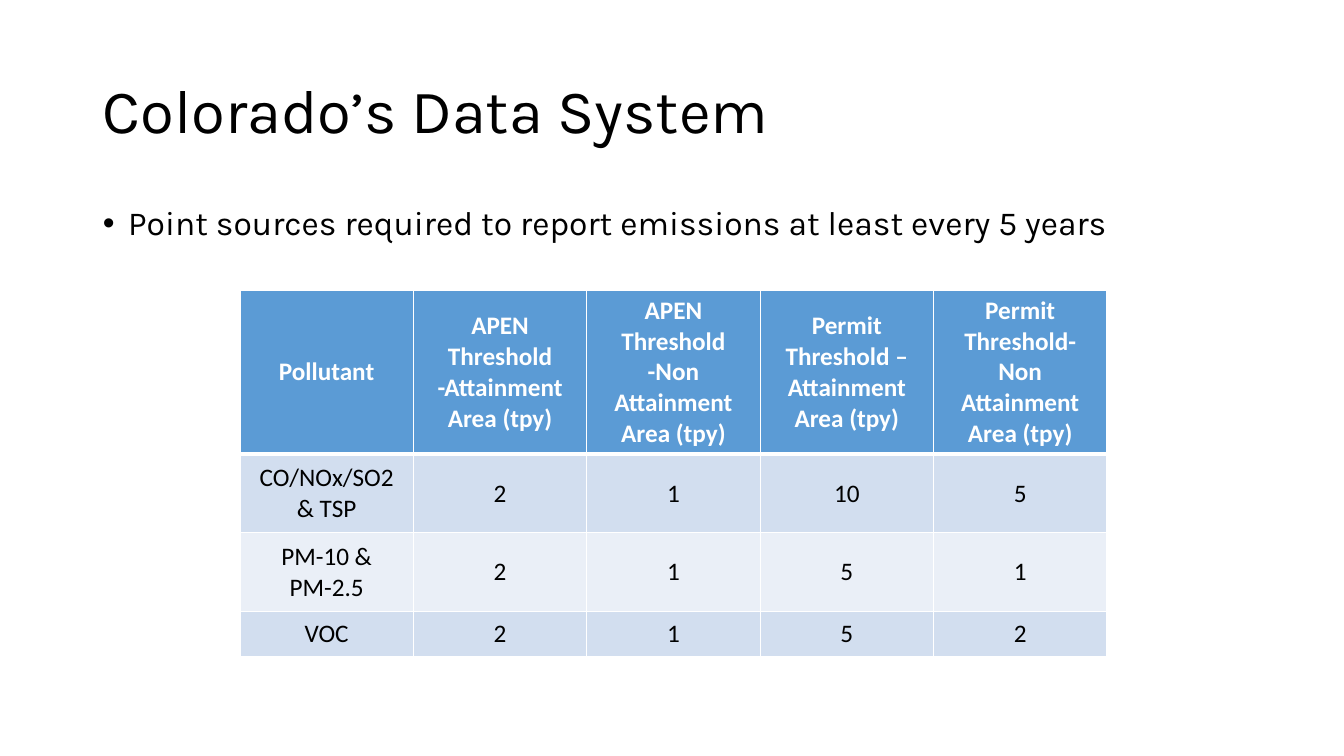
from dataclasses import dataclass

from lxml import etree
from pptx import Presentation
from pptx import util as u
from pptx.dml.color import RGBColor
from pptx.enum import text
from pptx.oxml import ns

COLORS = {
    "ink": "000000",
    "white": "FFFFFF",
    "header": "5B9BD5",
    "band_dark": "D2DEEF",
    "band_light": "EAEFF7",
}
COLUMN_WIDTH = 1.72
HEADINGS = (
    "Pollutant",
    "APEN Threshold -Attainment Area (tpy)",
    "APEN Threshold -Non Attainment Area (tpy)",
    "Permit Threshold –Attainment Area (tpy)",
    "Permit Threshold- Non Attainment Area (tpy)",
)


@dataclass(frozen=True)
class ThresholdRow:
    values: tuple[str, ...]
    height: float
    fill: str
    ink: str = "ink"
    bold: bool = False
    top_line: float = 1
    bottom_line: float = 1


ROWS = (
    ThresholdRow(HEADINGS, 1.61, "header", "white", True, bottom_line=3),
    ThresholdRow(("CO/NOx/SO2 & TSP", "2", "1", "10", "5"), 0.78, "band_dark", top_line=3),
    ThresholdRow(("PM-10 & PM-2.5", "2", "1", "5", "1"), 0.78, "band_light"),
    ThresholdRow(("VOC", "2", "1", "5", "2"), 0.45, "band_dark"),
)


def write(frame, wording: str, *, size: float, font: str, color: str = "ink",
          bold: bool = False, align=text.PP_ALIGN.LEFT, line_spacing: float = 1.0,
          bullet: str = "") -> None:
    frame.word_wrap = True
    frame.auto_size = text.MSO_AUTO_SIZE.NONE
    paragraph = frame.paragraphs[0]
    paragraph.alignment = align
    paragraph.line_spacing = line_spacing
    paragraph.space_before = u.Pt(0)
    if bullet:
        properties = paragraph._p.get_or_add_pPr()
        properties.set("marL", str(u.Inches(0.25)))
        properties.set("indent", str(u.Inches(-0.25)))
        etree.SubElement(properties, ns.qn("a:buFont"), typeface="Arial")
        etree.SubElement(properties, ns.qn("a:buChar"), char=bullet)
    run = paragraph.add_run()
    run.text = wording
    run.font.name = font
    run.font.size = u.Pt(size)
    run.font.bold = bold
    run.font.color.rgb = RGBColor.from_string(COLORS[color])


def place(placeholder, left: float, top: float, width: float, height: float) -> None:
    placeholder.left, placeholder.top = u.Inches(left), u.Inches(top)
    placeholder.width, placeholder.height = u.Inches(width), u.Inches(height)


def add_border(cell, side: str, width: float) -> None:
    line = etree.SubElement(cell._tc.get_or_add_tcPr(), ns.qn(f"a:ln{side}"),
                            w=str(u.Pt(width)))
    solid = etree.SubElement(line, ns.qn("a:solidFill"))
    etree.SubElement(solid, ns.qn("a:srgbClr"), val=COLORS["white"])


def fill_row(table, index: int, row: ThresholdRow) -> None:
    table.rows[index].height = u.Inches(row.height)
    borders = {"L": 1, "R": 1, "T": row.top_line, "B": row.bottom_line}
    for column, value in enumerate(row.values):
        cell = table.cell(index, column)
        for side, width in borders.items():
            add_border(cell, side, width)
        cell.fill.solid()
        cell.fill.fore_color.rgb = RGBColor.from_string(COLORS[row.fill])
        cell.vertical_anchor = text.MSO_ANCHOR.MIDDLE
        write(cell.text_frame, value, size=18, font="Calibri", color=row.ink,
              bold=row.bold, align=text.PP_ALIGN.CENTER)


def add_thresholds(slide) -> None:
    table = slide.shapes.add_table(
        len(ROWS), len(HEADINGS), u.Inches(2.38), u.Inches(2.88),
        u.Inches(COLUMN_WIDTH * len(HEADINGS)),
        u.Inches(sum(row.height for row in ROWS)),
    ).table
    for column in table.columns:
        column.width = u.Inches(COLUMN_WIDTH)
    for index, row in enumerate(ROWS):
        fill_row(table, index, row)


def main() -> None:
    deck = Presentation()
    deck.slide_width, deck.slide_height = u.Inches(13.33), u.Inches(7.5)
    slide = deck.slides.add_slide(deck.slide_layouts[1])

    heading = slide.shapes.title
    place(heading, 0.92, 0.4, 11.5, 1.45)
    heading.text_frame.vertical_anchor = text.MSO_ANCHOR.MIDDLE
    write(heading.text_frame, "Colorado’s Data System", size=44, font="Karla",
          line_spacing=0.9)

    reporting_rule = slide.placeholders[1]
    place(reporting_rule, 0.92, 2, 11.5, 4.76)
    write(reporting_rule.text_frame,
          "Point sources required to report emissions at least every 5 years",
          size=24, font="Karla", line_spacing=0.9, bullet="•")

    add_thresholds(slide)
    deck.save("out.pptx")


if __name__ == "__main__":
    main()
